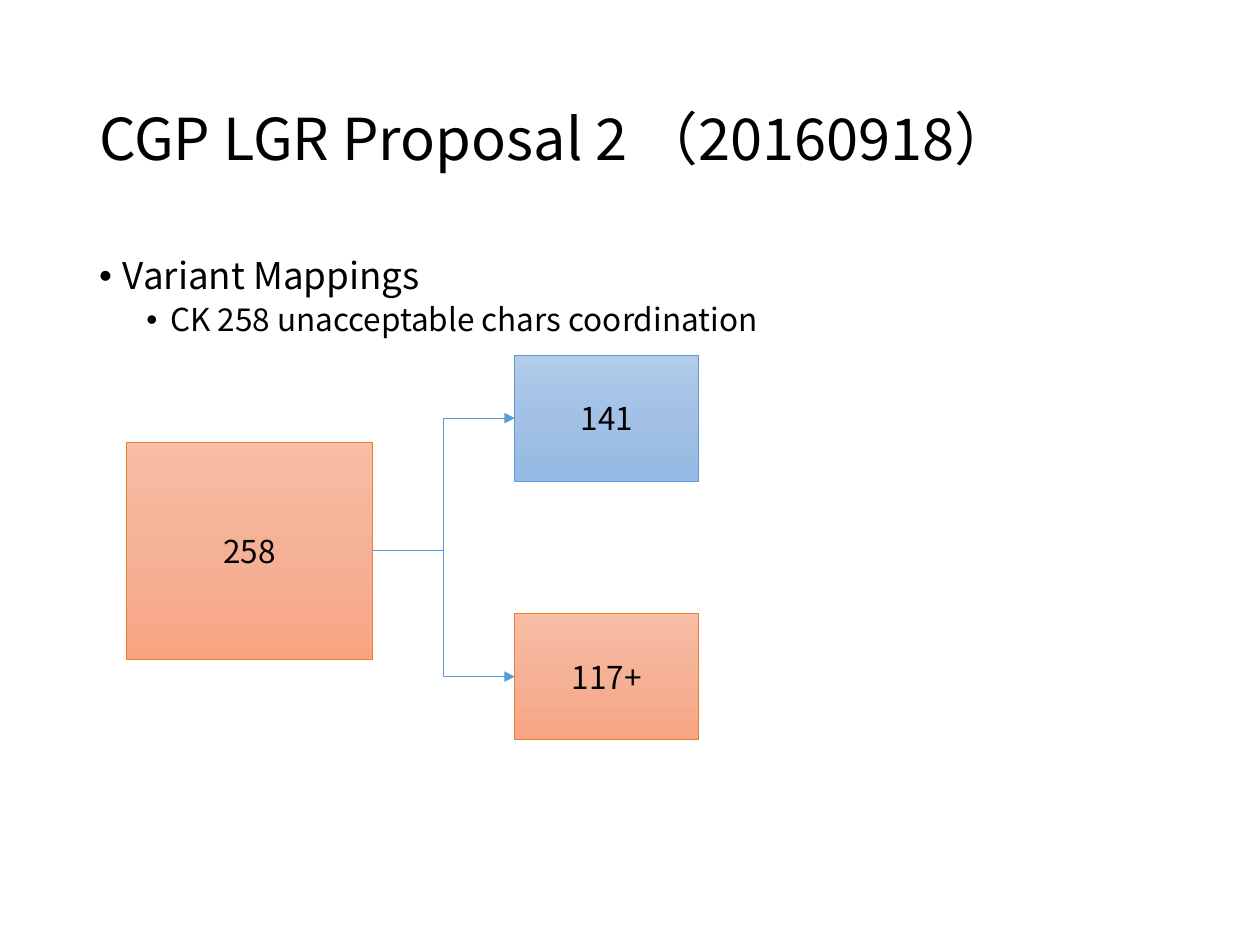
import copy
from dataclasses import dataclass

import lxml.etree
import pptx
import pptx.dml.color
import pptx.enum.shapes
import pptx.enum.text
import pptx.oxml.ns
import pptx.shapes.autoshape
import pptx.slide
import pptx.text.text
import pptx.util

Cm = pptx.util.Cm
Pt = pptx.util.Pt
RGBColor = pptx.dml.color.RGBColor
Align = pptx.enum.text.PP_ALIGN
Anchor = pptx.enum.text.MSO_ANCHOR
qn = pptx.oxml.ns.qn

FONT = "Noto Sans CJK SC"
BLACK = RGBColor(0x00, 0x00, 0x00)
ORANGE = RGBColor(0xED, 0x7D, 0x31)
BLUE = RGBColor(0x5B, 0x9B, 0xD5)
ORANGE_FADE = (
    RGBColor(0xF7, 0xBD, 0xA5),
    RGBColor(0xF5, 0xB1, 0x96),
    RGBColor(0xF8, 0xA5, 0x82),
)
BLUE_FADE = (
    RGBColor(0xB1, 0xCB, 0xE9),
    RGBColor(0xA3, 0xC1, 0xE5),
    RGBColor(0x93, 0xB9, 0xE4),
)
HAIRLINE = Pt(0.5)
LEFT_SITE, RIGHT_SITE = 1, 3


@dataclass(frozen=True)
class CharCount:
    label: str
    left: float
    top: float
    width: float
    height: float
    outline: RGBColor
    fade: tuple[RGBColor, ...]


@dataclass(frozen=True)
class Bullet:
    text: str
    level: int
    size: float
    indent: float
    space_before: float


UNACCEPTABLE = CharCount("258", 2.54, 8.92, 4.98, 4.37, ORANGE, ORANGE_FADE)
OUTCOMES = (
    CharCount("141", 10.38, 7.16, 3.71, 2.54, BLUE, BLUE_FADE),
    CharCount("117+", 10.38, 12.37, 3.71, 2.54, ORANGE, ORANGE_FADE),
)
BULLETS = (
    Bullet("Variant Mappings", 0, 21, 0.48, 7.5),
    Bullet("CK 258 unacceptable chars coordination", 1, 18, 1.43, 3.8),
)
HANGING = 0.48


def write_text(
    paragraph: pptx.text.text._Paragraph,
    text: str,
    *,
    size: float,
    align: Align = Align.LEFT,
    line_spacing: float = 1.0,
    space_before: float = 0,
) -> None:
    paragraph.alignment = align
    paragraph.line_spacing = line_spacing
    paragraph.space_before = Pt(space_before)
    run = paragraph.add_run()
    run.text = text
    run.font.size = Pt(size)
    run.font.name = FONT
    run.font.color.rgb = BLACK
    east_asian = lxml.etree.SubElement(run._r.get_or_add_rPr(), qn("a:ea"))
    east_asian.set("typeface", FONT)


def add_text_area(
    slide: pptx.slide.Slide, top: float, height: float, anchor: Anchor
) -> pptx.text.text.TextFrame:
    frame = slide.shapes.add_textbox(
        Cm(1.75), Cm(top), Cm(21.9), Cm(height)
    ).text_frame
    frame.word_wrap = True
    frame.vertical_anchor = anchor
    return frame


def add_bullet(paragraph: pptx.text.text._Paragraph, bullet: Bullet) -> None:
    paragraph.level = bullet.level
    write_text(
        paragraph,
        bullet.text,
        size=bullet.size,
        line_spacing=0.9,
        space_before=bullet.space_before,
    )
    properties = paragraph._p.get_or_add_pPr()
    properties.set("marL", str(Cm(bullet.indent)))
    properties.set("indent", str(-Cm(HANGING)))
    lxml.etree.SubElement(properties, qn("a:buFont")).set("typeface", "Arial")
    lxml.etree.SubElement(properties, qn("a:buChar")).set("char", "•")


def fade_down(
    shape: pptx.shapes.autoshape.Shape, colours: tuple[RGBColor, ...]
) -> None:
    shape.fill.gradient()
    shape.fill.gradient_angle = 270
    stops = shape._element.spPr.find(".//" + qn("a:gsLst"))
    stops.insert(1, copy.deepcopy(stops[0]))
    for index, (stop, colour) in enumerate(zip(shape.fill.gradient_stops, colours)):
        stop.position = index / (len(colours) - 1)
        stop.color.rgb = colour


def add_count(
    slide: pptx.slide.Slide, count: CharCount
) -> pptx.shapes.autoshape.Shape:
    box = slide.shapes.add_shape(
        pptx.enum.shapes.MSO_SHAPE.RECTANGLE,
        Cm(count.left), Cm(count.top), Cm(count.width), Cm(count.height),
    )
    box.shadow.inherit = False
    fade_down(box, count.fade)
    box.line.color.rgb = count.outline
    box.line.width = HAIRLINE
    box.text_frame.vertical_anchor = Anchor.MIDDLE
    write_text(
        box.text_frame.paragraphs[0], count.label, size=18, align=Align.CENTER
    )
    return box


def add_arrow(
    slide: pptx.slide.Slide,
    source: pptx.shapes.autoshape.Shape,
    target: pptx.shapes.autoshape.Shape,
) -> None:
    arrow = slide.shapes.add_connector(
        pptx.enum.shapes.MSO_CONNECTOR.ELBOW, 0, 0, 0, 0
    )
    arrow.begin_connect(source, RIGHT_SITE)
    arrow.end_connect(target, LEFT_SITE)
    arrow.line.color.rgb = BLUE
    arrow.line.width = HAIRLINE
    outline = arrow.line._get_or_add_ln()
    lxml.etree.SubElement(outline, qn("a:tailEnd")).set("type", "triangle")
    lxml.etree.SubElement(arrow._element.spPr, qn("a:effectLst"))


def main() -> None:
    presentation = pptx.Presentation()
    presentation.slide_width = Cm(25.4)
    presentation.slide_height = Cm(19.05)
    slide = presentation.slides.add_slide(presentation.slide_layouts[6])

    title = add_text_area(slide, 1.02, 3.68, Anchor.MIDDLE)
    write_text(
        title.paragraphs[0],
        "CGP LGR Proposal 2 （20160918）",
        size=33,
        line_spacing=0.9,
    )

    body = add_text_area(slide, 5.08, 12.09, Anchor.TOP)
    for index, bullet in enumerate(BULLETS):
        add_bullet(body.add_paragraph() if index else body.paragraphs[0], bullet)

    unacceptable = add_count(slide, UNACCEPTABLE)
    for outcome in OUTCOMES:
        add_arrow(slide, unacceptable, add_count(slide, outcome))

    presentation.save("out.pptx")


if __name__ == "__main__":
    main()
